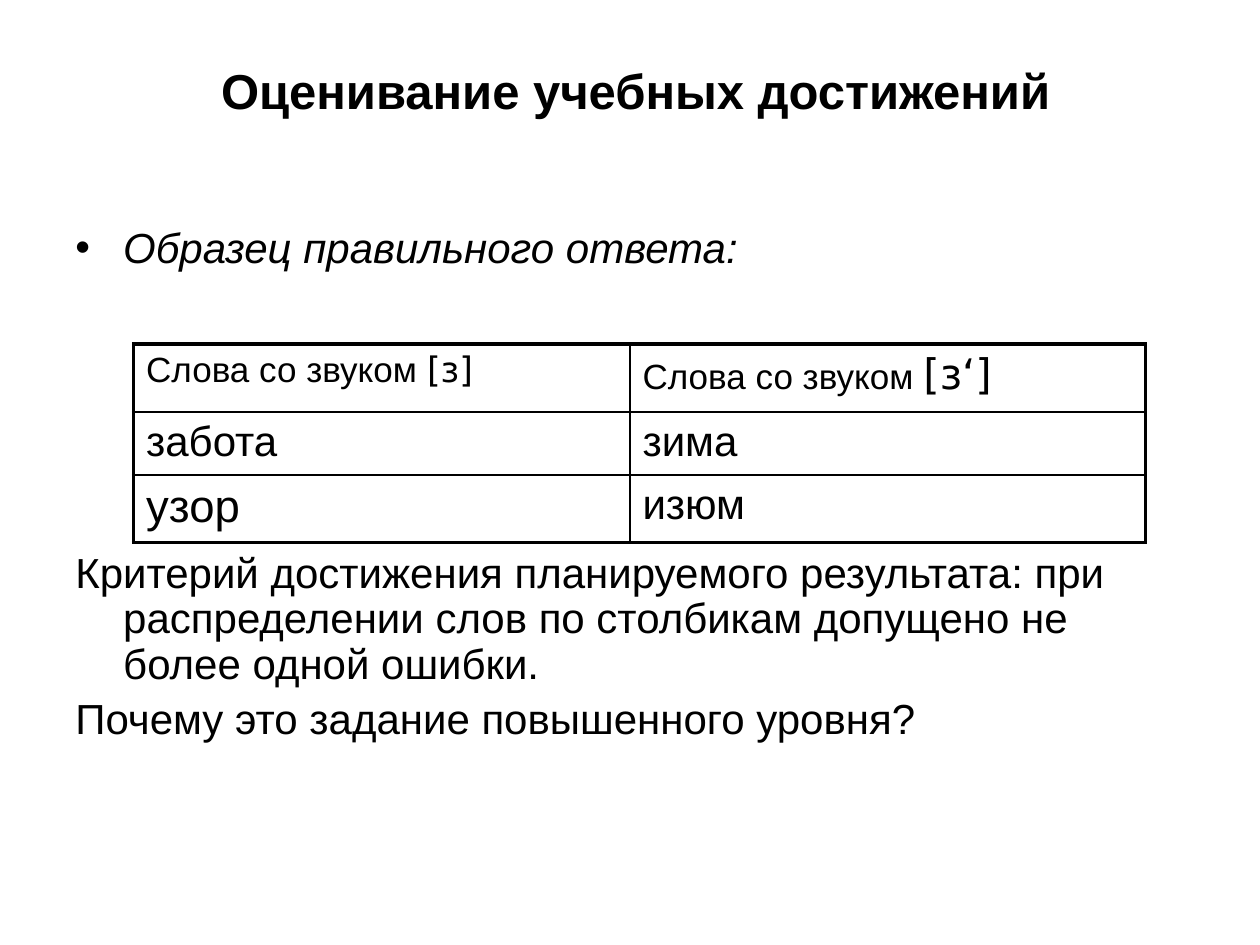
from lxml import etree
from pptx import Presentation
from pptx import util as u
from pptx.dml.color import RGBColor
from pptx.enum import text
from pptx.oxml.ns import qn

COLORS = {"ink": "000000"}


def add_span(para, words, size, face="Arial", bold=False, italic=False):
    span = para.add_run()
    span.text = words
    span.font.name = face
    span.font.size = u.Pt(size)
    span.font.bold = bold
    span.font.italic = italic
    span.font.color.rgb = RGBColor.from_string(COLORS["ink"])


def add_border(cell, position, side, width):
    line = etree.Element(qn(f"a:ln{side}"), w=str(u.Pt(width)))
    fill = etree.SubElement(line, qn("a:solidFill"))
    etree.SubElement(fill, qn("a:srgbClr"), val=COLORS["ink"])
    cell._tc.get_or_add_tcPr().insert(position, line)


deck = Presentation()
deck.slide_width = u.Inches(10)
deck.slide_height = u.Inches(7.5)
page = deck.slides.add_slide(deck.slide_layouts[6])

title = page.shapes.add_textbox(u.Inches(0.67), u.Inches(0.36), u.Inches(8.75), u.Inches(0.71))
title.text_frame.word_wrap = True
title.text_frame.vertical_anchor = text.MSO_ANCHOR.MIDDLE
para = title.text_frame.paragraphs[0]
para.alignment = text.PP_ALIGN.CENTER
add_span(para, "Оценивание учебных достижений", 28, bold=True)

body = page.shapes.add_textbox(u.Inches(0.5), u.Inches(1.75), u.Inches(9), u.Inches(4.95))
body.text_frame.word_wrap = True
statements = [
    ("Образец правильного ответа:", 0, True),
    ("Критерий достижения планируемого результата: при распределении слов "
     "по столбикам допущено не более одной ошибки.", 160, False),
    ("Почему это задание повышенного уровня?", 6, False),
]
for index, (words, gap, is_sample) in enumerate(statements):
    para = body.text_frame.paragraphs[0] if index == 0 else body.text_frame.add_paragraph()
    para.line_spacing = 0.9
    para.space_before = u.Pt(gap)
    props = para._p.get_or_add_pPr()
    props.set("marL", str(u.Inches(0.38)))
    props.set("indent", str(-u.Inches(0.38)))
    if is_sample:
        etree.SubElement(props, qn("a:buFont"), typeface="Arial")
        etree.SubElement(props, qn("a:buChar"), char="•")
    else:
        etree.SubElement(props, qn("a:buNone"))
    add_span(para, words, 24, italic=is_sample)

sound_rows = [
    [[("Слова со звуком ", 20, "Arial"), ("[з]", 20, "DejaVu Sans")],
     [("Слова со звуком ", 20, "Arial"), ("[з‘]", 24, "DejaVu Sans")]],
    [[("забота", 24, "Arial")], [("зима", 24, "Arial")]],
    [[("узор", 26, "Arial")], [("изюм", 24, "Arial")]],
]
column_widths = [3.94, 4.09]
row_heights = [0.54, 0.47, 0.51]
frame = page.shapes.add_table(
    len(row_heights), len(column_widths), u.Inches(1.06), u.Inches(2.73),
    u.Inches(sum(column_widths)), u.Inches(sum(row_heights)))
table = frame.table
table.first_row = False
table.horz_banding = False
for column, width in zip(table.columns, column_widths):
    column.width = u.Inches(width)
for row, height in zip(table.rows, row_heights):
    row.height = u.Inches(height)

for r, sound_row in enumerate(sound_rows):
    for c, spans in enumerate(sound_row):
        cell = table.cell(r, c)
        cell.fill.background()
        for words, size, face in spans:
            add_span(cell.text_frame.paragraphs[0], words, size, face)
        outer_sides = {
            "L": c == 0,
            "R": c == len(column_widths) - 1,
            "T": r == 0,
            "B": r == len(row_heights) - 1,
        }
        for position, (side, is_outer) in enumerate(outer_sides.items()):
            add_border(cell, position, side, 2.25 if is_outer else 1)

deck.save("out.pptx")
